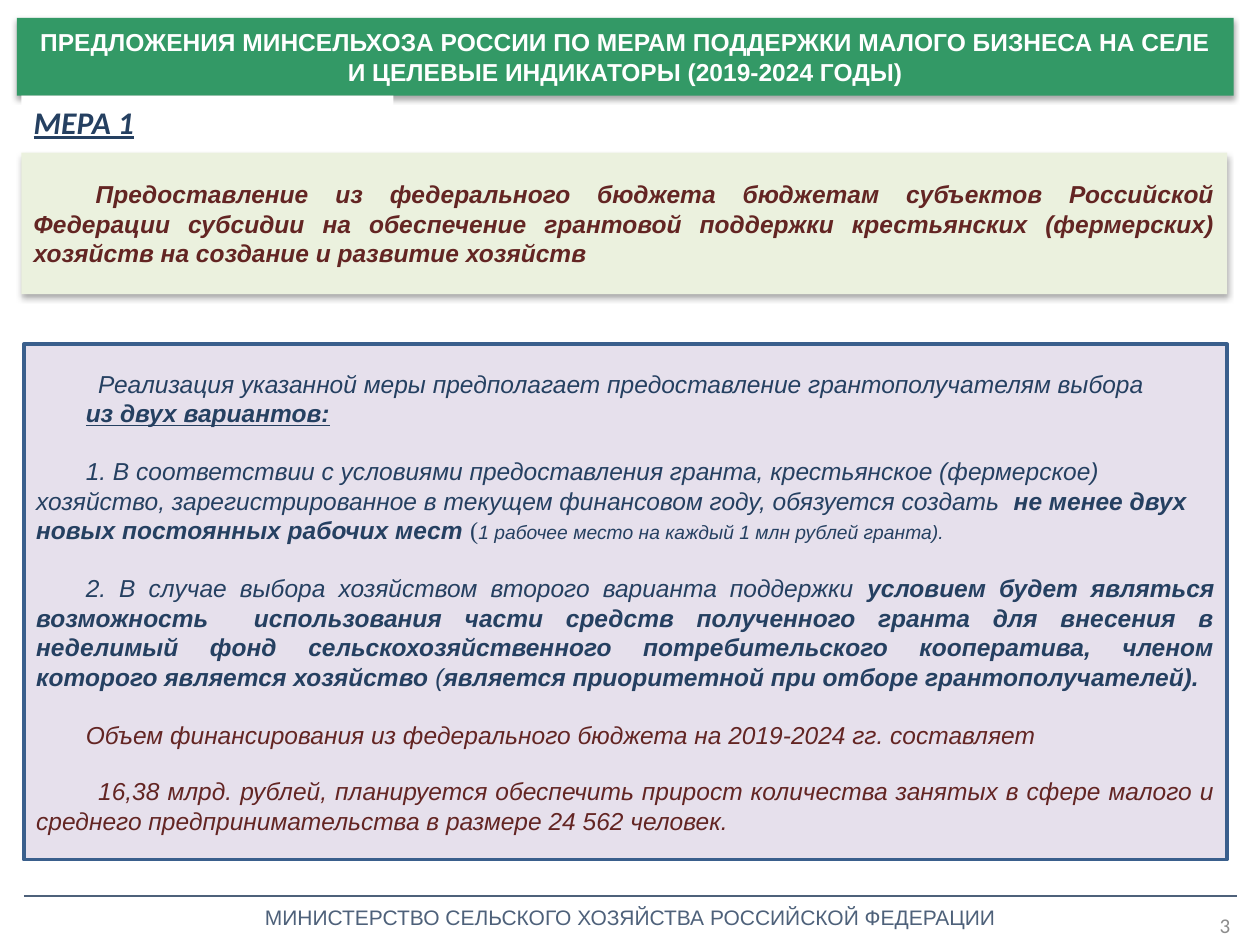
import lxml.etree
import pptx
import pptx.dml.color
import pptx.enum.shapes
import pptx.enum.text
import pptx.oxml.ns
import pptx.util

Cm = pptx.util.Cm
Pt = pptx.util.Pt
ALIGN = pptx.enum.text.PP_ALIGN
ANCHOR = pptx.enum.text.MSO_ANCHOR
qn = pptx.oxml.ns.qn

COLORS = {
    "green": "339966",
    "lime": "EBF1DE",
    "lilac": "E6E0EC",
    "white": "FFFFFF",
    "navy": "254061",
    "maroon": "632523",
    "border": "3A5F8C",
    "slate": "4E617A",
    "gray": "8C8C8C",
}


def rgb(name):
    return pptx.dml.color.RGBColor.from_string(COLORS[name])


def add_run(p, text, size=14, font="Arial", color="navy",
            bold=False, italic=False, underline=False):
    r = p.add_run()
    r.text = text
    r.font.size = Pt(size)
    r.font.name = font
    r.font.color.rgb = rgb(color)
    r.font.bold = bold
    r.font.italic = italic
    r.font.underline = underline


class SlideBuilder:
    def __init__(self, prs):
        self.slide = prs.slides.add_slide(prs.slide_layouts[5])

    def place(self, sp, box):
        sp.left, sp.top, sp.width, sp.height = [Cm(v) for v in box]

    def frame(self, sp, anchor=ANCHOR.MIDDLE):
        tf = sp.text_frame
        tf.word_wrap = True
        tf.auto_size = pptx.enum.text.MSO_AUTO_SIZE.NONE
        tf.vertical_anchor = anchor
        return tf

    def fill(self, sp, color):
        sp.fill.solid()
        sp.fill.fore_color.rgb = rgb(color)

    def shadow(self, sp, blur, dist, alpha):
        sp.shadow.inherit = False
        effects = sp._element.spPr.find(qn("a:effectLst"))
        outer = lxml.etree.SubElement(
            effects, qn("a:outerShdw"), blurRad=str(Pt(blur)),
            dist=str(Pt(dist)), dir="5400000", rotWithShape="0")
        clr = lxml.etree.SubElement(outer, qn("a:srgbClr"), val="000000")
        lxml.etree.SubElement(clr, qn("a:alpha"), val=str(alpha * 1000))

    def title(self, text, box):
        sp = self.slide.shapes.title
        self.place(sp, box)
        self.fill(sp, "green")
        self.shadow(sp, 3.1, 1.8, 35)
        p = self.frame(sp).paragraphs[0]
        p.alignment = ALIGN.CENTER
        add_run(p, text, color="white", bold=True)

    def panel(self, box, fill, border=None):
        sp = self.slide.shapes.add_shape(
            pptx.enum.shapes.MSO_SHAPE.RECTANGLE, *[Cm(v) for v in box])
        sp.shadow.inherit = False
        self.fill(sp, fill)
        if border:
            sp.line.color.rgb = rgb(border)
            sp.line.width = Pt(2)
        else:
            sp.line.fill.background()
        self.frame(sp)
        return sp

    def paragraph(self, sp, runs, align=ALIGN.LEFT, indent=0, before=0):
        tf = sp.text_frame
        p = tf.paragraphs[0]
        if p.runs:
            p = tf.add_paragraph()
        p.alignment = align
        if indent:
            pPr = p._p.get_or_add_pPr()
            pPr.set("marL", "0")
            pPr.set("indent", str(Cm(indent)))
        if before:
            p.space_before = Pt(before)
        for text, style in runs:
            add_run(p, text, **style)

    def label(self, text, box, align, anchor, **style):
        sp = self.slide.shapes.add_textbox(*[Cm(v) for v in box])
        self.frame(sp, anchor)
        self.paragraph(sp, [(text, style)], align)

    def line(self, x1, y1, x2, y2, color):
        c = self.slide.shapes.add_connector(
            pptx.enum.shapes.MSO_CONNECTOR.STRAIGHT,
            Cm(x1), Cm(y1), Cm(x2), Cm(y2))
        c.line.color.rgb = rgb(color)
        c.line.width = Pt(1)
        lxml.etree.SubElement(c._element.spPr, qn("a:effectLst"))


def main():
    prs = pptx.Presentation()
    prs.slide_width, prs.slide_height = Cm(25.4), Cm(19.05)
    s = SlideBuilder(prs)

    s.title("ПРЕДЛОЖЕНИЯ МИНСЕЛЬХОЗА РОССИИ ПО МЕРАМ ПОДДЕРЖКИ МАЛОГО БИЗНЕСА "
            "НА СЕЛЕ И ЦЕЛЕВЫЕ ИНДИКАТОРЫ (2019-2024 ГОДЫ)",
            (0.34, 0.36, 24.53, 1.57))

    italic = {"italic": True}
    strong = {"italic": True, "bold": True}
    maroon = {"italic": True, "color": "maroon"}

    measure = s.panel((0.43, 1.93, 7.5, 1.04), "white")
    s.paragraph(measure, [("МЕРА 1", {
        **strong, "size": 18, "font": "Calibri", "underline": True})])

    summary = s.panel((0.43, 3.08, 24.31, 2.85), "lime")
    s.shadow(summary, 3.5, 2.2, 32)
    s.paragraph(summary, [(
        "Предоставление из федерального бюджета бюджетам субъектов Российской "
        "Федерации субсидии на обеспечение грантовой поддержки крестьянских "
        "(фермерских) хозяйств на создание и развитие хозяйств",
        {**maroon, "bold": True})], ALIGN.JUSTIFY, 1.25)

    details = s.panel((0.48, 6.94, 24.26, 10.39), "lilac", "border")
    s.paragraph(details, [(
        "Реализация указанной меры предполагает предоставление "
        "грантополучателям выбора", italic)], indent=1.25)
    s.paragraph(details, [
        ("из двух вариантов:", {**strong, "underline": True})], indent=1)
    s.paragraph(details, [
        ("1. В соответствии с условиями предоставления гранта, крестьянское "
         "(фермерское) хозяйство, зарегистрированное в текущем финансовом "
         "году, обязуется создать  ", italic),
        ("не менее двух новых постоянных рабочих мест ", strong),
        ("(", {"font": "Times New Roman"}),
        ("1 рабочее место на каждый 1 млн рублей гранта).",
         {**italic, "size": 11}),
    ], indent=1, before=16.5)
    s.paragraph(details, [
        ("2. В случае выбора хозяйством второго варианта поддержки ", italic),
        ("условием будет являться возможность  использования части средств "
         "полученного гранта для внесения в неделимый фонд "
         "сельскохозяйственного потребительского кооператива, членом "
         "которого является хозяйство ", strong),
        ("(", italic),
        ("является приоритетной при отборе грантополучателей).", strong),
    ], ALIGN.JUSTIFY, 1, 16.5)
    s.paragraph(details, [(
        "Объем финансирования из федерального бюджета на 2019-2024 гг. "
        "составляет \n16,38 млрд. рублей, планируется обеспечить прирост "
        "количества занятых в сфере малого и среднего предпринимательства "
        "в размере 24 562 человек.", maroon)], ALIGN.JUSTIFY, 1.25, 15.5)

    s.line(0.48, 18.06, 24.94, 18.06, "slate")
    s.label("МИНИСТЕРСТВО СЕЛЬСКОГО ХОЗЯЙСТВА РОССИЙСКОЙ ФЕДЕРАЦИИ",
            (0.99, 18.11, 23.44, 0.76), ALIGN.CENTER, ANCHOR.TOP,
            size=12, color="slate")
    s.label("3", (23.04, 18.14, 2.01, 1.02), ALIGN.RIGHT, ANCHOR.MIDDLE,
            size=12, font="Calibri", color="gray")

    prs.save("out.pptx")


if __name__ == "__main__":
    main()
